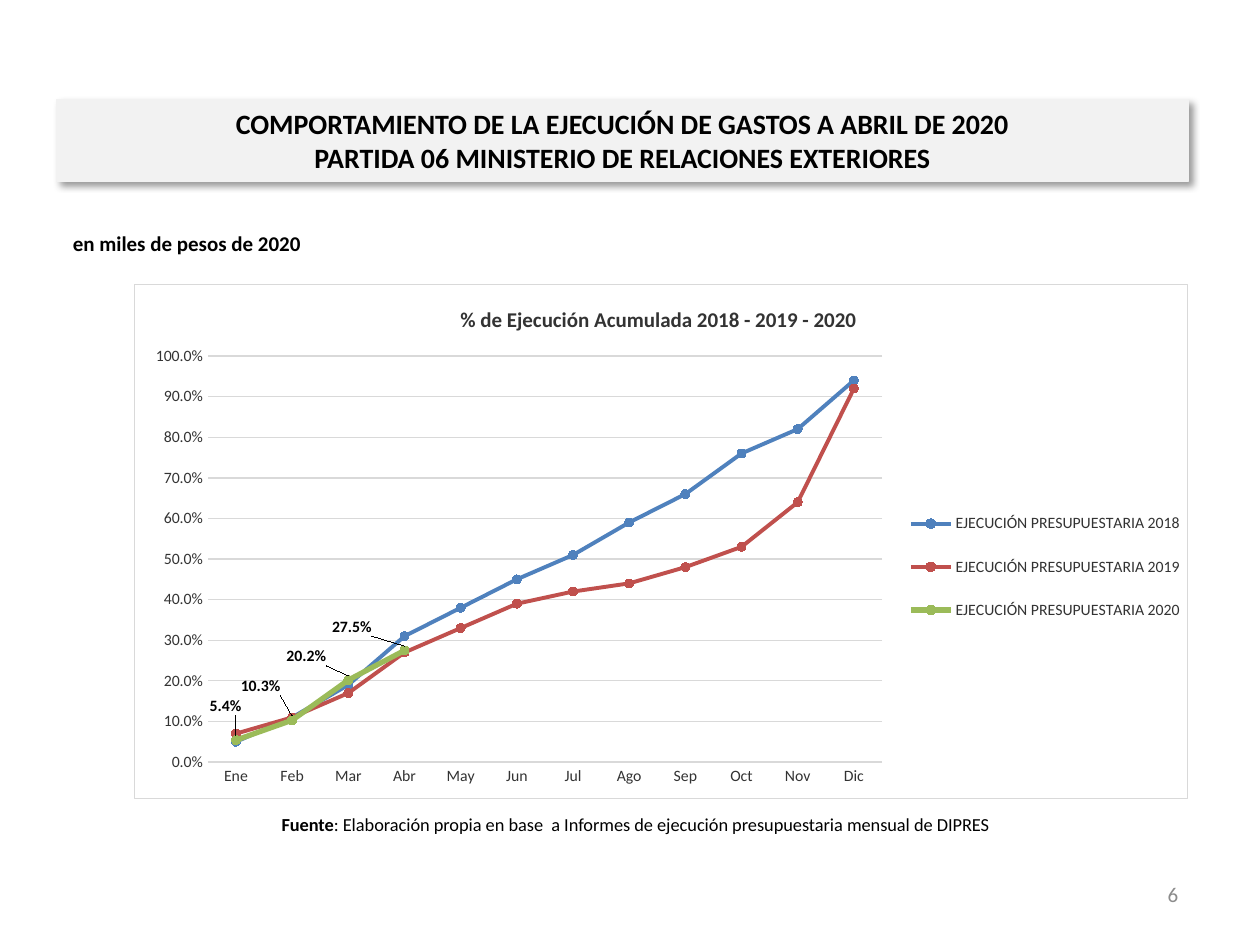
from pptx import Presentation
from pptx.chart.data import CategoryChartData
from pptx.dml.color import RGBColor
from pptx.enum.chart import XL_CHART_TYPE, XL_LABEL_POSITION, XL_LEGEND_POSITION, XL_MARKER_STYLE, XL_TICK_MARK
from pptx.enum.shapes import MSO_SHAPE
from pptx.enum.text import MSO_ANCHOR, PP_ALIGN
from pptx.oxml import parse_xml
from pptx.oxml.ns import nsdecls, qn
from pptx.util import Inches, Pt


def color(value):
    return RGBColor.from_string(value)


def place(parent, index, modes, **fractions):
    for layout in parent.findall(qn("c:layout")):
        parent.remove(layout)
    values = "".join(f'<c:{name} val="{value}"/>' for name, value in fractions.items())
    parent.insert(index, parse_xml(
        f'<c:layout {nsdecls("c")}><c:manualLayout>{modes}{values}</c:manualLayout></c:layout>'))


deck = Presentation()
deck.slide_width = Inches(10)
deck.slide_height = Inches(7.5)
page = deck.slides.add_slide(deck.slide_layouts[6])

banner = page.shapes.add_shape(MSO_SHAPE.RECTANGLE, Inches(0.45), Inches(0.79), Inches(8.98), Inches(0.65))
banner.shadow.inherit = False
banner.fill.solid()
banner.fill.fore_color.rgb = color("F2F2F2")
banner.line.color.rgb = color("F2F2F2")
banner.line.width = Pt(0.75)
banner.element.spPr.find(qn("a:effectLst")).append(parse_xml(
    f'<a:outerShdw {nsdecls("a")} blurRad="{Pt(4)}" dist="{Pt(3)}" dir="2700000" algn="tl" rotWithShape="0">'
    '<a:srgbClr val="000000"><a:alpha val="40000"/></a:srgbClr></a:outerShdw>'))
banner.text_frame.vertical_anchor = MSO_ANCHOR.MIDDLE
para = banner.text_frame.paragraphs[0]
para.text = "COMPORTAMIENTO DE LA EJECUCIÓN DE GASTOS A ABRIL DE 2020\vPARTIDA 06 MINISTERIO DE RELACIONES EXTERIORES"
para.alignment = PP_ALIGN.CENTER
para.font.name = "Calibri"
para.font.size = Pt(16)
para.font.bold = True
para.font.color.rgb = color("000000")

texts = [
    (0.48, 1.78, 2.04, 0.3, 12, "000000", PP_ALIGN.LEFT, False, [("en miles de pesos de 2020", True)]),
    (0.45, 6.34, 9.19, 0.4, 10.5, "000000", PP_ALIGN.CENTER, True,
     [("Fuente", True),
      (": Elaboración propia en base  a Informes de ejecución presupuestaria mensual de DIPRES", False)]),
    (7.12, 6.9, 2.33, 0.4, 12, "8C8C8C", PP_ALIGN.RIGHT, True, [("6", False)]),
]
for left, top, width, height, size, ink, alignment, wrap, spans in texts:
    box = page.shapes.add_textbox(Inches(left), Inches(top), Inches(width), Inches(height))
    box.text_frame.word_wrap = wrap
    box.text_frame.vertical_anchor = MSO_ANCHOR.MIDDLE
    para = box.text_frame.paragraphs[0]
    para.alignment = alignment
    para.font.name = "Calibri"
    para.font.size = Pt(size)
    para.font.color.rgb = color(ink)
    for words, bold in spans:
        span = para.add_run()
        span.text = words
        span.font.bold = bold

execution = {
    2018: [0.05, 0.11, 0.19, 0.31, 0.38, 0.45, 0.51, 0.59, 0.66, 0.76, 0.82, 0.94],
    2019: [0.07, 0.11, 0.17, 0.27, 0.33, 0.39, 0.42, 0.44, 0.48, 0.53, 0.64, 0.92],
    2020: [0.054, 0.103, 0.202, 0.275] + [None] * 8,
}
data = CategoryChartData(number_format="0.0%")
data.categories = ["Ene", "Feb", "Mar", "Abr", "May", "Jun", "Jul", "Ago", "Sep", "Oct", "Nov", "Dic"]
for year, values in execution.items():
    data.add_series(f"EJECUCIÓN PRESUPUESTARIA {year}", values)
chart = page.shapes.add_chart(
    XL_CHART_TYPE.LINE_MARKERS, Inches(1.06), Inches(2.25), Inches(8.37), Inches(4.09), data).chart
chart.font.name = "Calibri"
chart.font.size = Pt(10)
chart.font.color.rgb = color("000000")
chart.element.find(qn("c:chart")).addnext(parse_xml(
    f'<c:spPr {nsdecls("c", "a")}><a:solidFill><a:srgbClr val="FFFFFF"/></a:solidFill>'
    f'<a:ln w="{Pt(0.75)}"><a:solidFill><a:srgbClr val="D9D9D9"/></a:solidFill></a:ln></c:spPr>'))

chart.has_title = True
para = chart.chart_title.text_frame.paragraphs[0]
para.text = "% de Ejecución Acumulada 2018 - 2019 - 2020 "
para.font.name = "Calibri"
para.font.size = Pt(12)
para.font.bold = True
para.font.color.rgb = color("333333")

chart.has_legend = True
chart.legend.position = XL_LEGEND_POSITION.RIGHT
chart.legend.include_in_layout = False
for part in (chart.category_axis.tick_labels, chart.value_axis.tick_labels, chart.legend):
    part.font.name = "Calibri"
    part.font.size = Pt(9)
    part.font.color.rgb = color("333333")
for axis in (chart.category_axis, chart.value_axis):
    axis.major_tick_mark = XL_TICK_MARK.NONE
    axis.minor_tick_mark = XL_TICK_MARK.NONE
chart.value_axis.minimum_scale = 0
chart.value_axis.maximum_scale = 1
chart.value_axis.major_unit = 0.1
chart.value_axis.tick_labels.number_format = "0.0%"
chart.value_axis.tick_labels.number_format_is_linked = False
chart.value_axis.format.line.fill.background()
for line in (chart.category_axis.format.line, chart.value_axis.major_gridlines.format.line):
    line.color.rgb = color("D9D9D9")
    line.width = Pt(0.75)

plot = chart.plots[0]
plot.vary_by_categories = False
for series, ink, width in zip(plot.series, ("4F81BD", "C0504D", "9BBB59"), (2.25, 2.25, 3)):
    series.smooth = False
    series.format.line.color.rgb = color(ink)
    series.format.line.width = Pt(width)
    series.marker.style = XL_MARKER_STYLE.CIRCLE
    series.marker.size = 5
    series.marker.format.fill.solid()
    series.marker.format.fill.fore_color.rgb = color(ink)
    series.marker.format.line.color.rgb = color(ink)

current = plot.series[2]
current.data_labels.show_value = True
current.data_labels.number_format = "0.0%"
current.data_labels.number_format_is_linked = False
labels = [current.points[month].data_label for month in range(4)]
for label in [current.data_labels] + labels:
    label.position = XL_LABEL_POSITION.ABOVE
    label.font.name = "Calibri"
    label.font.size = Pt(9)
    label.font.bold = True
    label.font.color.rgb = color("000000")

offsets = [(-0.01, -0.03), (-0.03, -0.03), (-0.04, -0.01), (-0.05, -0.01)]
for label, (x, y) in zip(chart.element.iter(qn("c:dLbl")), offsets):
    place(label, 1, "", x=x, y=y)
edges = '<c:xMode val="edge"/><c:yMode val="edge"/>'
place(chart.element.find(qn("c:chart")).find(qn("c:plotArea")), 0,
      '<c:layoutTarget val="inner"/>' + edges, x=0.07, y=0.14, w=0.64, h=0.79)
place(chart.element.find(qn("c:chart")).find(qn("c:legend")), 1, edges, x=0.73, y=0.4, w=0.27, h=0.3)

deck.save("out.pptx")
